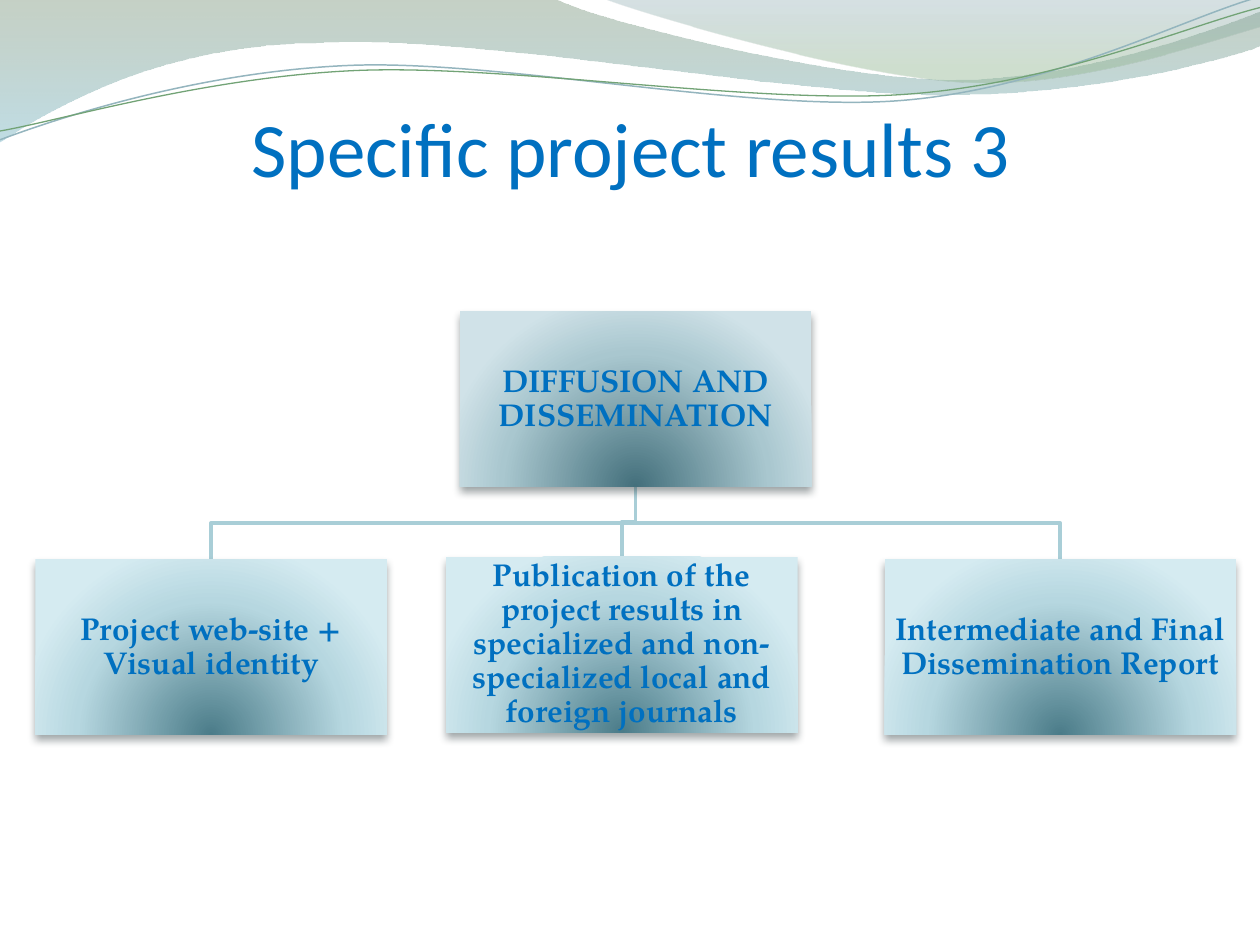
import pptx
import pptx.dml.color
import pptx.enum.shapes
import pptx.enum.text
import pptx.oxml
import pptx.oxml.ns
import pptx.util

Inches = pptx.util.Inches
Pt = pptx.util.Pt
NS = pptx.oxml.ns.nsdecls("a")
BLUE = "0070C0"
LINK = "A9CED7"
BOX_W, BOX_H = 2.79, 1.39
ROOT = ("DIFFUSION AND DISSEMINATION", 3.65, 2.47)
LEAVES = [
    ("Project web-site + Visual identity", 0.28, 4.44),
    ("Publication of the project results in specialized and "
     "non-specialized local and foreign journals", 3.54, 4.42),
    ("Intermediate and Final Dissemination Report", 7.02, 4.44),
]
ROOT_STOPS = [(0, "44707C", 100), (68, "A9C7CF", 100), (100, "D0E2E8", 100)]
LEAF_STOPS = [(0, "4B7C89", 100), (68, "B6D7E0", 100), (100, "D5EBF1", 100)]
LINEAR = '<a:lin ang="5400000" scaled="0"/>'
GLOW = ('<a:path path="circle"><a:fillToRect l="50000" t="130000" '
        'r="50000" b="-30000"/></a:path>')

# Each step holds an end point, or two control points and an end point.
BANDS = [
    ([(0, -0.01), (4.4, -0.01), (4.76, 0.17, 6.64, 0.63, 7.58, 0.63),
      (8.53, 0.63, 9.58, 0.26, 10, 0.09), (10.01, 0.36),
      (9.83, 0.44, 8.7, 0.76, 7.46, 0.75),
      (6.22, 0.75, 3.82, 0.28, 2.57, 0.34),
      (1.29, 0.35, 0.46, 0.83, -0.01, 1.13), (0, -0.01)],
     [(0, "809980", 45), (100, "8DC1CF", 55)]),
    ([(4.79, -0.01), (5.09, 0.11, 6.82, 0.62, 7.69, 0.65),
      (8.56, 0.69, 9.61, 0.32, 10, 0.21), (10, 0), (4.79, -0.01)],
     [(0, "779BA4", 30), (80, "96B996", 45)]),
]
CURVES = [
    ([(0, 1.11), (0.48, 0.93, 1.58, 0.57, 2.77, 0.52),
      (3.95, 0.47, 5.93, 0.89, 7.13, 0.8),
      (8.33, 0.71, 9.38, 0.15, 9.98, -0.02)], "94B5BE", 0.85),
    ([(0, 1.04), (0.47, 0.96, 1.64, 0.61, 2.83, 0.56),
      (4.03, 0.51, 5.97, 0.83, 7.17, 0.75),
      (8.36, 0.67, 9.41, 0.21, 10, 0.06)], "72A376", 0.75),
]


def color(code):
    return pptx.dml.color.RGBColor.from_string(code)


def bend_to(shape, step):
    """Make a cubic curve element in the local units of the shape."""
    marks = "".join(
        f'<a:pt x="{Inches(x) - shape.left}" y="{Inches(y) - shape.top}"/>'
        for x, y in zip(step[::2], step[1::2]))
    return pptx.oxml.parse_xml(
        f'<a:cubicBezTo {NS}>{marks}</a:cubicBezTo>')


def outline(slide, steps, close):
    """Join the end points, then swap in a curve where a step has one."""
    ends = [(Inches(x), Inches(y)) for *_, x, y in steps]
    pen = slide.shapes.build_freeform(*ends[0])
    pen.add_line_segments(ends[1:], close=close)
    shape = pen.convert_to_shape()
    shape.shadow.inherit = False
    sides = list(shape.element.spPr.iter(pptx.oxml.ns.qn("a:lnTo")))
    for side, step in zip(sides, steps[1:]):
        if len(step) > 2:
            side.getparent().replace(side, bend_to(shape, step))
    return shape


def stroke(slide, steps, code, width):
    shape = outline(slide, steps, False)
    shape.fill.background()
    shape.line.color.rgb = color(code)
    shape.line.width = Pt(width)


def shade(shape, stops, kind):
    """Fill with a gradient of (percent, colour, opacity) stops, no line."""
    marks = "".join(
        f'<a:gs pos="{pos * 1000}"><a:srgbClr val="{code}">'
        f'<a:alpha val="{alpha * 1000}"/></a:srgbClr></a:gs>'
        for pos, code, alpha in stops)
    shape.fill.solid()
    props = shape.element.spPr
    old = props.find(pptx.oxml.ns.qn("a:solidFill"))
    props.replace(old, pptx.oxml.parse_xml(
        f'<a:gradFill {NS} rotWithShape="1"><a:gsLst>{marks}</a:gsLst>'
        f'{kind}</a:gradFill>'))
    shape.line.fill.background()


def cast(shape, code):
    """Drop a soft shadow straight down."""
    shape.shadow.inherit = False
    effects = shape.element.spPr.find(pptx.oxml.ns.qn("a:effectLst"))
    effects.append(pptx.oxml.parse_xml(
        f'<a:outerShdw {NS} blurRad="{Pt(4.5)}" dist="{Pt(3)}" '
        f'dir="5400000" rotWithShape="0"><a:srgbClr val="{code}">'
        f'<a:alpha val="48000"/></a:srgbClr></a:outerShdw>'))


def write(shape, text, font, size, bold, anchor, insets):
    frame = shape.text_frame
    frame.word_wrap = True
    frame.vertical_anchor = anchor
    (frame.margin_left, frame.margin_top,
     frame.margin_right, frame.margin_bottom) = map(Inches, insets)
    frame.text = text
    para = frame.paragraphs[0]
    para.alignment = pptx.enum.text.PP_ALIGN.CENTER
    style = para.runs[0].font
    style.name, style.size, style.bold = font, Pt(size), bold
    style.color.rgb = color(BLUE)
    return para


def header(slide):
    for steps, stops in BANDS:
        shade(outline(slide, steps, True), stops, LINEAR)
    for steps, code, width in CURVES:
        stroke(slide, steps, code, width)


def title(slide, left, top, width, height):
    box = slide.shapes.add_textbox(*map(Inches, (left, top, width, height)))
    write(box, "Specific project results 3", "Calibri", 44, False,
          pptx.enum.text.MSO_ANCHOR.BOTTOM, (0, 0.05, 0, 0))


def card(slide, text, left, top, stops, shadow):
    shape = slide.shapes.add_shape(
        pptx.enum.shapes.MSO_SHAPE.RECTANGLE,
        *map(Inches, (left, top, BOX_W, BOX_H)))
    shade(shape, stops, GLOW)
    cast(shape, shadow)
    para = write(shape, text, "TeX Gyre Pagella", 18, True,
                 pptx.enum.text.MSO_ANCHOR.MIDDLE, [0.01] * 4)
    para.line_spacing = 0.9


def chart(slide):
    """Draw the links from the root to its leaves, then the cards."""
    _, left, top = ROOT
    start, base = left + BOX_W / 2, top + BOX_H
    for _, x, y in reversed(LEAVES):
        end, bend = x + BOX_W / 2, (base + y) / 2
        stroke(slide, [(start, base), (start, bend), (end, bend), (end, y)],
               LINK, 2)
    card(slide, *ROOT, ROOT_STOPS, "354245")
    for leaf in LEAVES:
        card(slide, *leaf, LEAF_STOPS, "3B484C")


def main():
    deck = pptx.Presentation()
    deck.slide_width, deck.slide_height = Inches(10), Inches(7.5)
    slide = deck.slides.add_slide(deck.slide_layouts[6])
    header(slide)
    title(slide, 0.51, 0.76, 9, 0.77)
    chart(slide)
    deck.save("out.pptx")


if __name__ == "__main__":
    main()
